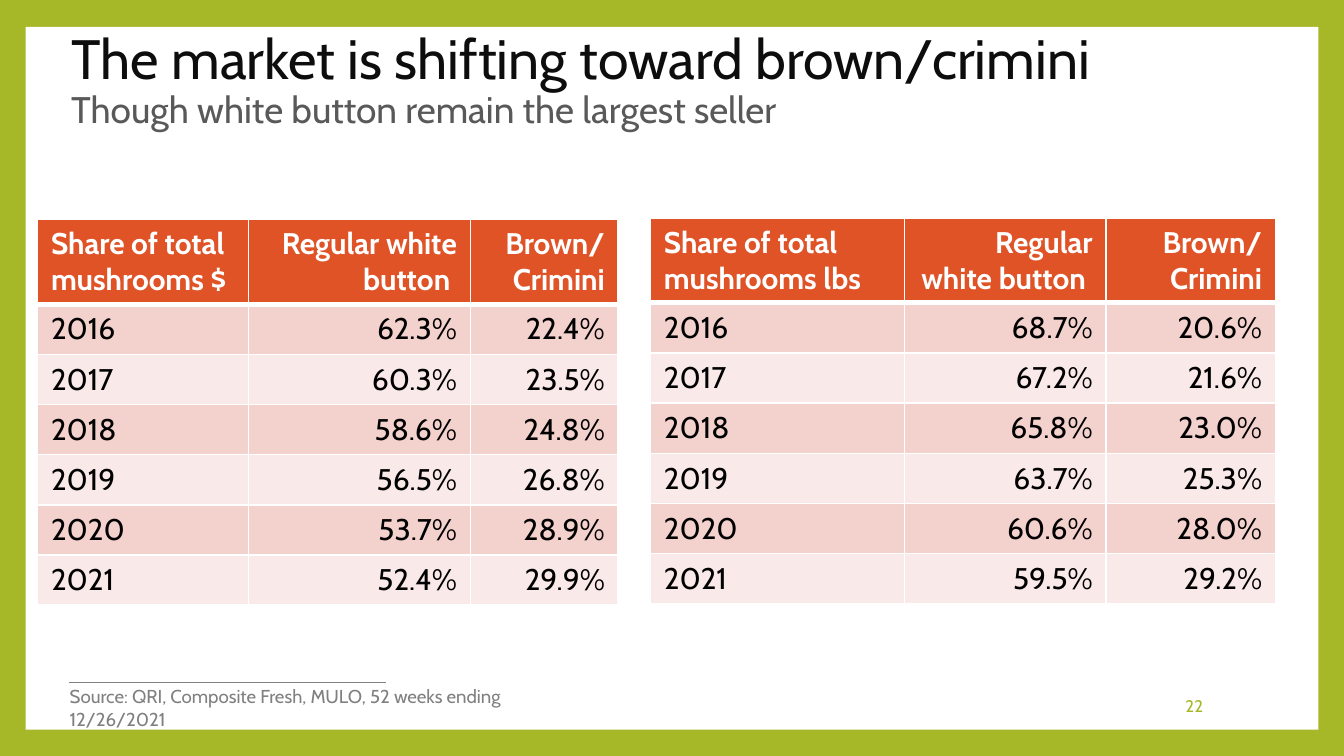
from lxml.etree import SubElement
from pptx import Presentation
from pptx.dml.color import RGBColor
from pptx.enum.shapes import MSO_CONNECTOR, MSO_SHAPE
from pptx.enum.text import MSO_ANCHOR, MSO_AUTO_SIZE, PP_ALIGN
from pptx.oxml.ns import qn
from pptx.util import Inches, Pt

TITLE = "The market is shifting toward brown/crimini"
SUBTITLE = "Though white button remain the largest seller"
SOURCE = "Source: QRI, Composite Fresh, MULO, 52 weeks ending 12/26/2021"
PAGE_NUMBER = "22"

YEARS = range(2016, 2022)
SHARE_TABLES = [
    {
        "unit": "$",
        "at": (0.28, 1.63),
        "columns": (1.57, 1.65, 1.1),
        "white": (62.3, 60.3, 58.6, 56.5, 53.7, 52.4),
        "brown": (22.4, 23.5, 24.8, 26.8, 28.9, 29.9),
    },
    {
        "unit": "lbs",
        "at": (4.84, 1.62),
        "columns": (1.89, 1.5, 1.26),
        "white": (68.7, 67.2, 65.8, 63.7, 60.6, 59.5),
        "brown": (20.6, 21.6, 23.0, 25.3, 28.0, 29.2),
    },
]
TABLE_HEIGHT, HEADER_HEIGHT = 2.87, 0.63
ROW_HEIGHT = (TABLE_HEIGHT - HEADER_HEIGHT) / len(YEARS)

THEME = {
    "font": "Cabin",
    "green": "A6B727", "white": "FFFFFF", "black": "000000",
    "title": "0D0D0D", "subtitle": "595959", "grey": "808080",
    "header": "DF5327", "bands": ("F3D1CD", "F9E9E8"),
    "title_size": 29.7, "subtitle_size": 19.8,
    "table_size": 16, "source_size": 10, "number_size": 9,
}


def color(value):
    return RGBColor.from_string(value)


def set_font(font, size, value, bold=False):
    font.name = THEME["font"]
    font.size = Pt(size)
    font.color.rgb = color(value)
    font.bold = bold


def fill_solid(fill, value):
    fill.solid()
    fill.fore_color.rgb = color(value)


def add_frame(page):
    """Green page edge around a white panel, with the rule above the source."""
    fill_solid(page.background.fill, THEME["green"])
    panel = page.shapes.add_shape(
        MSO_SHAPE.RECTANGLE, Inches(0.19), Inches(0.2), Inches(9.62), Inches(5.23))
    panel.shadow.inherit = False
    fill_solid(panel.fill, THEME["white"])
    panel.line.fill.background()
    rule = page.shapes.add_connector(
        MSO_CONNECTOR.STRAIGHT, Inches(0.51), Inches(5.08), Inches(2.87), Inches(5.08))
    rule.line.color.rgb = color(THEME["grey"])
    rule.line.width = Pt(0.79)
    SubElement(rule.element.spPr, qn("a:effectLst"))


def add_title(page):
    title = page.shapes.title
    page.shapes.element.append(title.element)  # in front of the panel
    title.left, title.top = Inches(0.43), Inches(0.21)
    title.width, title.height = Inches(8.53), Inches(0.79)
    frame = title.text_frame
    frame.auto_size = MSO_AUTO_SIZE.NONE
    frame.vertical_anchor = MSO_ANCHOR.MIDDLE
    para = frame.paragraphs[0]
    para.alignment = PP_ALIGN.LEFT
    para.line_spacing = 0.9
    span = para.add_run()
    span.text = TITLE
    set_font(span.font, THEME["title_size"], THEME["title"])
    para.add_line_break()
    span = para.add_run()
    span.text = SUBTITLE
    set_font(span.font, THEME["subtitle_size"], THEME["subtitle"])


def add_label(page, text, place, size, value, align, anchor):
    box = page.shapes.add_textbox(*map(Inches, place))
    frame = box.text_frame
    frame.word_wrap = True
    frame.vertical_anchor = anchor
    para = frame.paragraphs[0]
    para.text = text
    para.alignment = align
    set_font(para.font, size, value)


def set_borders(cell, bottom):
    """Draw white cell edges; they must come before the fill in the XML."""
    properties = cell._tc.get_or_add_tcPr()
    for side, points in (("L", 1), ("R", 1), ("T", 1), ("B", bottom)):
        line = SubElement(properties, qn(f"a:ln{side}"), w=str(Pt(points)))
        fill = SubElement(line, qn("a:solidFill"))
        SubElement(fill, qn("a:srgbClr"), val=THEME["white"])


def add_share_table(page, share):
    rows = [(f"Share of total mushrooms {share['unit']}",
             "Regular white button ", "Brown/\vCrimini")]
    rows += [(str(year), f"{white:.1f}%", f"{brown:.1f}%")
             for year, white, brown in zip(YEARS, share["white"], share["brown"])]
    heights = [HEADER_HEIGHT] + [ROW_HEIGHT] * len(YEARS)
    table = page.shapes.add_table(
        len(rows), len(rows[0]), *map(Inches, share["at"]),
        Inches(sum(share["columns"])), Inches(TABLE_HEIGHT)).table
    for column, width in zip(table.columns, share["columns"]):
        column.width = Inches(width)
    for r, (texts, height) in enumerate(zip(rows, heights)):
        table.rows[r].height = Inches(height)
        header = r == 0
        background = THEME["header"] if header else THEME["bands"][(r - 1) % 2]
        for c, text in enumerate(texts):
            cell = table.cell(r, c)
            set_borders(cell, bottom=3 if header else 1)
            fill_solid(cell.fill, background)
            cell.vertical_anchor = MSO_ANCHOR.TOP if header and c == 0 else MSO_ANCHOR.MIDDLE
            para = cell.text_frame.paragraphs[0]
            para.text = text
            para.alignment = PP_ALIGN.RIGHT if c else PP_ALIGN.LEFT
            set_font(para.font, THEME["table_size"],
                     THEME["white" if header else "black"], bold=header)


def main():
    deck = Presentation()
    deck.slide_width = Inches(10)
    deck.slide_height = deck.slide_width * 9 // 16
    page = deck.slides.add_slide(deck.slide_layouts.get_by_name("Title Only"))
    add_frame(page)
    add_title(page)
    add_label(page, PAGE_NUMBER, (7.65, 5.1, 1.4, 0.3), THEME["number_size"],
              THEME["green"], PP_ALIGN.RIGHT, MSO_ANCHOR.MIDDLE)
    add_label(page, SOURCE, (0.42, 5.05, 3.99, 0.27), THEME["source_size"],
              THEME["grey"], PP_ALIGN.LEFT, MSO_ANCHOR.TOP)
    for share in SHARE_TABLES:
        add_share_table(page, share)
    deck.save("out.pptx")


if __name__ == "__main__":
    main()
